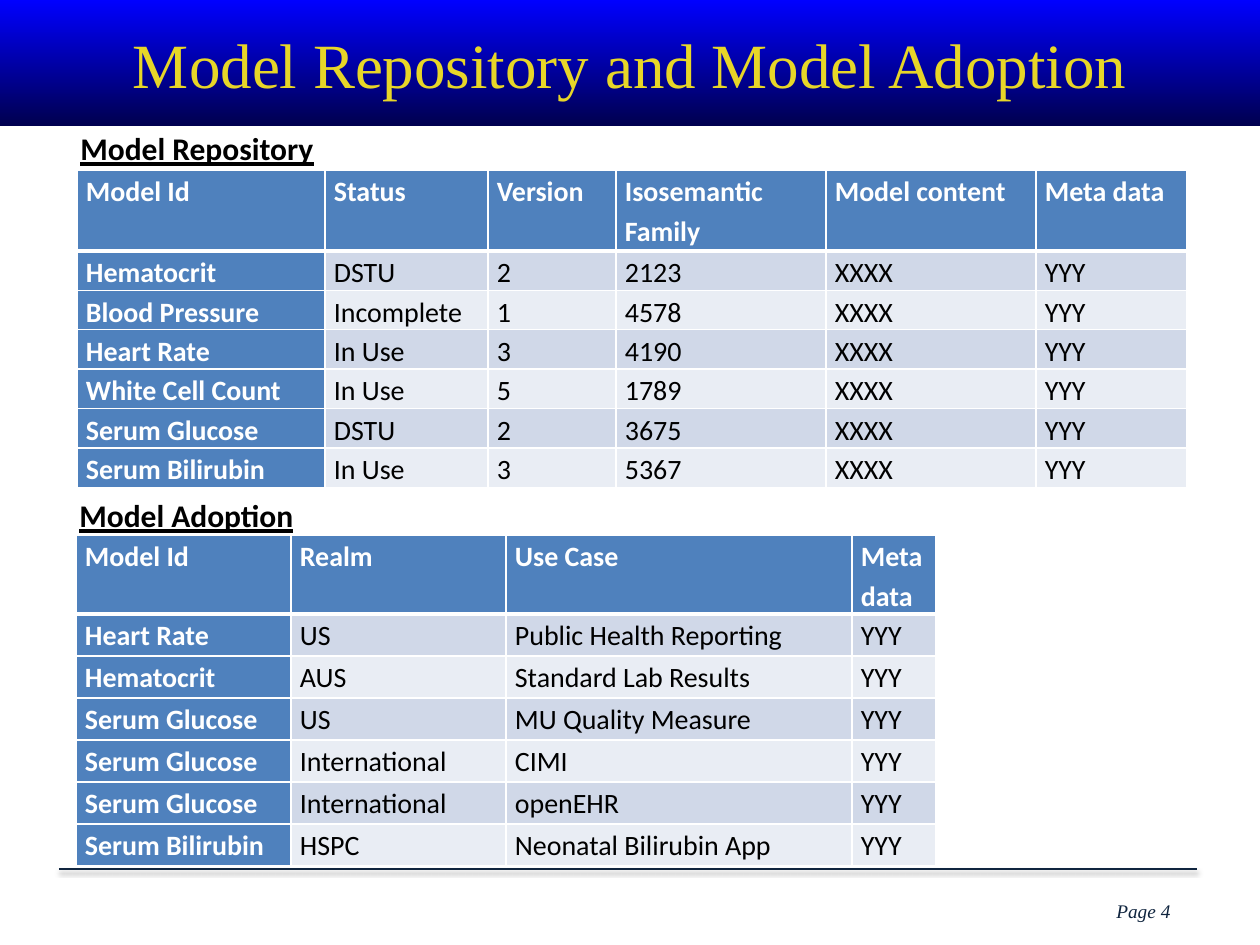
from typing import NamedTuple

from lxml.etree import SubElement
from pptx import Presentation
from pptx.dml.color import RGBColor
from pptx.enum.shapes import MSO_CONNECTOR as Connector, MSO_SHAPE as Preset
from pptx.enum.text import MSO_ANCHOR as Anchor, MSO_AUTO_SIZE as AutoSize, PP_ALIGN as Align
from pptx.oxml import parse_xml
from pptx.oxml.ns import nsdecls, qn
from pptx.util import Emu, Pt

PX = 914400 / 126

WHITE = RGBColor(0xFF, 0xFF, 0xFF)
BLACK = RGBColor(0, 0, 0)
BAND_TOP = RGBColor(0, 0, 0xFF)
BAND_BOTTOM = RGBColor(0, 0, 0x4F)
TITLE_YELLOW = RGBColor(0xE7, 0xD6, 0x28)
PAGE_NAVY = RGBColor(0x0F, 0x24, 0x3E)
RULE_NAVY = RGBColor(0x10, 0x25, 0x3F)
HEADING_BLUE = RGBColor(0x4F, 0x81, 0xBD)
STRIPES = (RGBColor(0xE9, 0xED, 0xF4), RGBColor(0xD0, 0xD8, 0xE8))

SERIF = "Times New Roman"
SANS = "Calibri"


class Grid(NamedTuple):
    left: int
    top: int
    columns: tuple[int, ...]
    header_height: int
    row_height: int
    rows: list[tuple[str, ...]]


class Label(NamedTuple):
    left: int
    top: int
    width: int
    height: int
    text: str
    font: str
    size: int
    color: RGBColor
    bold: bool = False
    italic: bool = False
    underline: bool = False


REPOSITORY = Grid(77, 170, (248, 163, 128, 210, 210, 151), 81, 39, [
    ("Model Id", "Status", "Version", "Isosemantic Family", "Model content", "Meta data"),
    ("Hematocrit", "DSTU", "2", "2123", "XXXX", "YYY"),
    ("Blood Pressure", "Incomplete", "1", "4578", "XXXX", "YYY"),
    ("Heart Rate", "In Use", "3", "4190", "XXXX", "YYY"),
    ("White Cell Count", "In Use", "5", "1789", "XXXX", "YYY"),
    ("Serum Glucose", "DSTU", "2", "3675", "XXXX", "YYY"),
    ("Serum Bilirubin", "In Use", "3", "5367", "XXXX", "YYY"),
])
ADOPTION = Grid(76, 535, (215, 215, 346, 84), 79, 42, [
    ("Model Id", "Realm", "Use Case", "Meta data"),
    ("Heart Rate", "US", "Public Health Reporting", "YYY"),
    ("Hematocrit", "AUS", "Standard Lab Results", "YYY"),
    ("Serum Glucose", "US", "MU Quality Measure", "YYY"),
    ("Serum Glucose", "International", "CIMI", "YYY"),
    ("Serum Glucose", "International", "openEHR", "YYY"),
    ("Serum Bilirubin", "HSPC", "Neonatal Bilirubin App", "YYY"),
])
LABELS = [
    Label(1104, 893, 100, 37, "Page 4", SERIF, 11, PAGE_NAVY, italic=True),
    Label(68, 123, 260, 50, "Model Repository", SANS, 18, BLACK, bold=True, underline=True),
    Label(67, 490, 241, 50, "Model Adoption", SANS, 18, BLACK, bold=True, underline=True),
]


def px(length: float) -> Emu:
    return Emu(round(length * PX))


def add_band(page) -> None:
    band = page.shapes.add_shape(Preset.ROUNDED_RECTANGLE, 0, 0, px(1260), px(126))
    band.adjustments[0] = 0
    band.shadow.inherit = False
    band.line.fill.background()
    band.fill.gradient()
    band.fill.gradient_angle = 270
    for stop, color in zip(band.fill.gradient_stops, (BAND_TOP, BAND_BOTTOM)):
        stop.color.rgb = color


def add_rule(page) -> None:
    rule = page.shapes.add_connector(Connector.STRAIGHT, px(59), px(869), px(1197), px(869))
    rule.line.color.rgb = RULE_NAVY
    rule.line.width = Pt(1)
    rule.element.spPr.append(parse_xml(
        f'<a:effectLst {nsdecls("a")}><a:outerShdw blurRad="{Pt(3.1)}" dist="{Pt(1.6)}"'
        ' dir="5400000" rotWithShape="0"><a:srgbClr val="000000"><a:alpha val="38000"/>'
        '</a:srgbClr></a:outerShdw></a:effectLst>'))


def place_title(page, text: str) -> None:
    title = page.shapes.title
    title.left, title.top, title.width, title.height = px(63), px(0), px(1134), px(126)
    frame = title.text_frame
    frame.text = text
    frame.vertical_anchor = Anchor.MIDDLE
    para = frame.paragraphs[0]
    para.alignment = Align.CENTER
    para.font.name, para.font.size = SERIF, Pt(36)
    para.font.color.rgb = TITLE_YELLOW
    page.shapes.element.append(title.element)  # in front of the band


def add_label(page, label: Label) -> None:
    box = page.shapes.add_textbox(px(label.left), px(label.top), px(label.width), px(label.height))
    frame = box.text_frame
    frame.word_wrap = False
    frame.auto_size = AutoSize.SHAPE_TO_FIT_TEXT
    frame.text = label.text
    font = frame.paragraphs[0].font
    font.name, font.size = label.font, Pt(label.size)
    font.bold, font.italic, font.underline = label.bold, label.italic, label.underline
    font.color.rgb = label.color


def set_borders(cell, top: int, bottom: int) -> None:
    """Give a cell white borders; widths are in points."""
    properties = cell._tc.get_or_add_tcPr()
    for side, width in (("L", 1), ("R", 1), ("T", top), ("B", bottom)):
        line = SubElement(properties, qn(f"a:ln{side}"), w=str(Pt(width)))
        fill = SubElement(line, qn("a:solidFill"))
        SubElement(fill, qn("a:srgbClr"), val=str(WHITE))


def fill_cell(cell, text: str, row: int, column: int) -> None:
    heading = row == 0 or column == 0
    set_borders(cell, top=3 if row == 1 else 1, bottom=3 if row == 0 else 1)
    cell.fill.solid()
    cell.fill.fore_color.rgb = HEADING_BLUE if heading else STRIPES[row % 2]
    cell.margin_left = cell.margin_right = px(9)
    cell.margin_top = cell.margin_bottom = 0
    cell.text = text
    para = cell.text_frame.paragraphs[0]
    para.line_spacing = 1.15
    para.font.name, para.font.size, para.font.bold = SANS, Pt(16), heading
    para.font.color.rgb = WHITE if heading else BLACK


def add_grid(page, grid: Grid) -> None:
    heights = [grid.header_height] + [grid.row_height] * (len(grid.rows) - 1)
    table = page.shapes.add_table(
        len(grid.rows), len(grid.columns), px(grid.left), px(grid.top),
        px(sum(grid.columns)), px(sum(heights))).table
    table.first_col = True
    for column, width in zip(table.columns, grid.columns):
        column.width = px(width)
    for row, height in zip(table.rows, heights):
        row.height = px(height)
    for row, texts in enumerate(grid.rows):
        for column, text in enumerate(texts):
            fill_cell(table.cell(row, column), text, row, column)


def main() -> None:
    deck = Presentation()
    deck.slide_width, deck.slide_height = px(1260), px(945)
    page = deck.slides.add_slide(deck.slide_layouts[5])

    # Header and footer
    add_band(page)
    add_rule(page)
    place_title(page, "Model Repository and Model Adoption")

    # Tables, then their headings and the page number
    for grid in (REPOSITORY, ADOPTION):
        add_grid(page, grid)
    for label in LABELS:
        add_label(page, label)

    deck.save("out.pptx")


if __name__ == "__main__":
    main()
